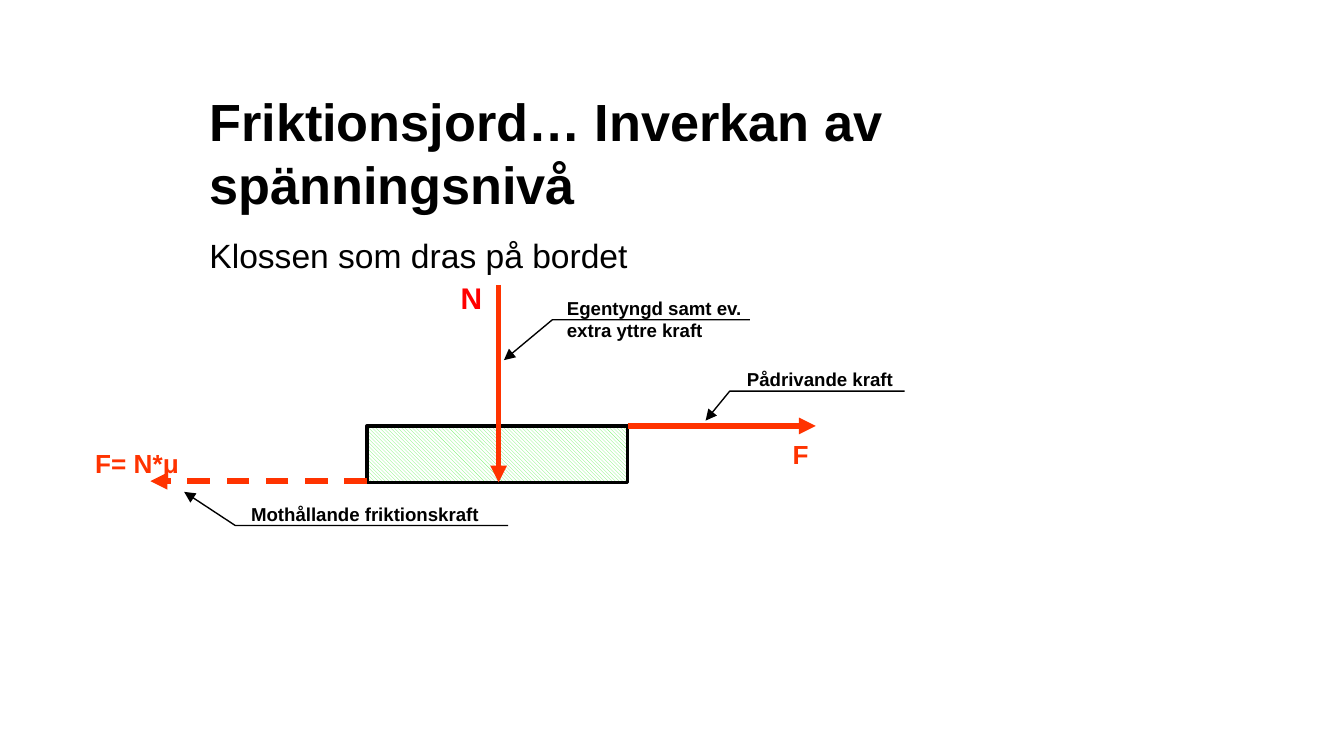
from lxml import etree
from pptx import Presentation
from pptx import util as u
from pptx.dml.color import RGBColor
from pptx.enum import dml, shapes, text
from pptx.oxml.ns import qn

COLORS = {"black": "000000", "white": "FFFFFF", "force": "FF3300",
          "normal": "FF0000", "hatch": "73F569"}
FONT = "Arial"


def rgb(name):
    return RGBColor.from_string(COLORS[name])


def add_text(slide, box, lines, size, color="black", bold=True, wrap=False,
             anchor=text.MSO_ANCHOR.TOP, spacing=None):
    shape = slide.shapes.add_textbox(*(u.Inches(value) for value in box))
    frame = shape.text_frame
    frame.word_wrap = wrap
    frame.vertical_anchor = anchor
    for index, line in enumerate(lines):
        paragraph = frame.paragraphs[0] if index == 0 else frame.add_paragraph()
        if spacing:
            paragraph.line_spacing = spacing
        run = paragraph.add_run()
        run.text = line
        run.font.name = FONT
        run.font.size = u.Pt(size)
        run.font.bold = bold
        run.font.color.rgb = rgb(color)


def style_line(line, color, width, dashed=False, arrow=False):
    line.color.rgb = rgb(color)
    line.width = u.Pt(width)
    if dashed:
        line.dash_style = dml.MSO_LINE.DASH
    if arrow:
        properties = line.fill._xPr
        etree.SubElement(properties, qn("a:tailEnd"), type="triangle")


def add_force(slide, start, end, dashed=False):
    arrow = slide.shapes.add_connector(
        shapes.MSO_CONNECTOR.STRAIGHT,
        *(u.Inches(value) for value in (*start, *end)))
    style_line(arrow.line, "force", 3, dashed, arrow=True)
    etree.SubElement(arrow._element.spPr, qn("a:effectLst"))


def add_callout(slide, label_box, lines, points):
    """A label with an underline that bends into an arrow."""
    add_text(slide, label_box, lines, 10)
    corners = [(u.Inches(x), u.Inches(y)) for x, y in points]
    builder = slide.shapes.build_freeform(*corners[0])
    builder.add_line_segments(corners[1:], close=False)
    leader = builder.convert_to_shape()
    leader.shadow.inherit = False
    leader.fill.background()
    style_line(leader.line, "black", 0.75, arrow=True)


def add_heading(slide, left, top, width):
    add_text(slide, (left, top, width, 0.94),
             ["Friktionsjord… Inverkan av spänningsnivå"], 28, wrap=True,
             anchor=text.MSO_ANCHOR.MIDDLE)
    add_text(slide, (left, top + 1.01, width, 3.33),
             ["Klossen som dras på bordet"], 18, bold=False, wrap=True,
             spacing=1.1)


def add_force_diagram(slide, left, top):
    def at(x, y):
        return left + x, top + y

    # Sliding block
    block_left, block_top, block_width, block_height = 2.12, 1.14, 1.94, 0.42
    block_right = block_left + block_width
    block_bottom = block_top + block_height
    block = slide.shapes.add_shape(
        shapes.MSO_SHAPE.RECTANGLE,
        *(u.Inches(value) for value in
          (*at(block_left, block_top), block_width, block_height)))
    block.shadow.inherit = False
    block.fill.patterned()
    block.fill.pattern = dml.MSO_PATTERN.DARK_DOWNWARD_DIAGONAL
    block.fill.fore_color.rgb = rgb("hatch")
    block.fill.back_color.rgb = rgb("white")
    style_line(block.line, "black", 2)

    # Forces: pull, normal and friction
    add_force(slide, at(block_right, block_top), at(5.46, block_top))
    add_force(slide, at(3.1, 0.09), at(3.1, block_bottom))
    add_force(slide, at(block_left, 1.55), at(0.51, 1.55), dashed=True)

    # Force symbols
    for symbol, x, y, width, height, size, color in (
            ("F", 5.19, 1.18, 0.31, 0.27, 14, "force"),
            ("F= N*μ", 0, 1.25, 0.92, 0.27, 14, "force"),
            ("N", 2.72, 0, 0.36, 0.3, 16, "normal")):
        add_text(slide, (*at(x, y), width, height), [symbol], size, color)

    # Callouts: label box, lines, underline end, bend and arrow tip
    for (x, y, width, height), lines, points in (
            ((1.16, 1.66, 1.91, 0.27), ["Mothållande friktionskraft"],
             ((3.17, 1.88), (1.14, 1.88), (0.76, 1.63))),
            ((3.51, 0.13, 1.56, 0.44),
             ["Egentyngd samt ev.", "extra yttre kraft"],
             ((4.97, 0.35), (3.5, 0.35), (3.14, 0.65))),
            ((4.85, 0.66, 1.3, 0.27), ["Pådrivande kraft"],
             ((6.12, 0.88), (4.82, 0.88), (4.64, 1.1)))):
        add_callout(slide, (*at(x, y), width, height), lines,
                    [at(*point) for point in points])


def main():
    presentation = Presentation()
    presentation.slide_width = u.Inches(10)
    presentation.slide_height = presentation.slide_width * 9 // 16
    slide = presentation.slides.add_slide(presentation.slide_layouts[6])
    add_heading(slide, 1.46, 0.66, 7.09)
    add_force_diagram(slide, 0.61, 2.03)
    presentation.save("out.pptx")


if __name__ == "__main__":
    main()
